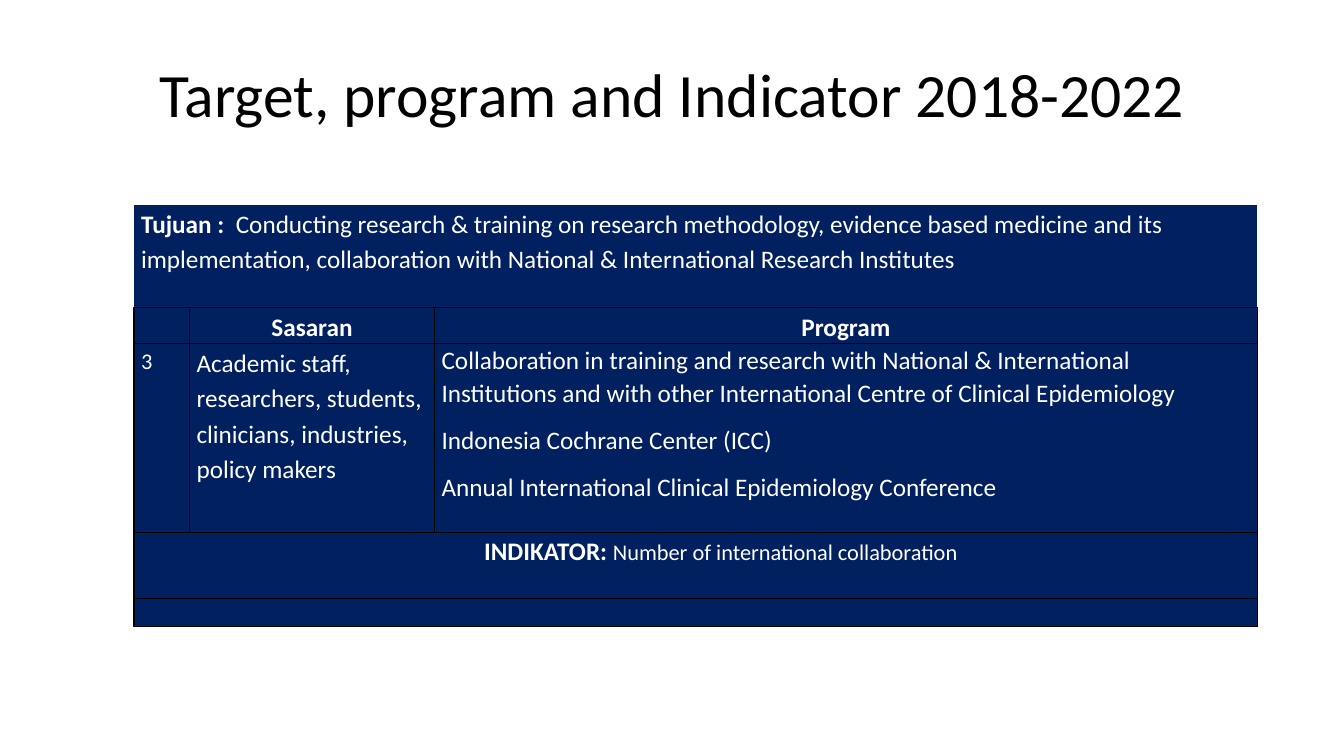
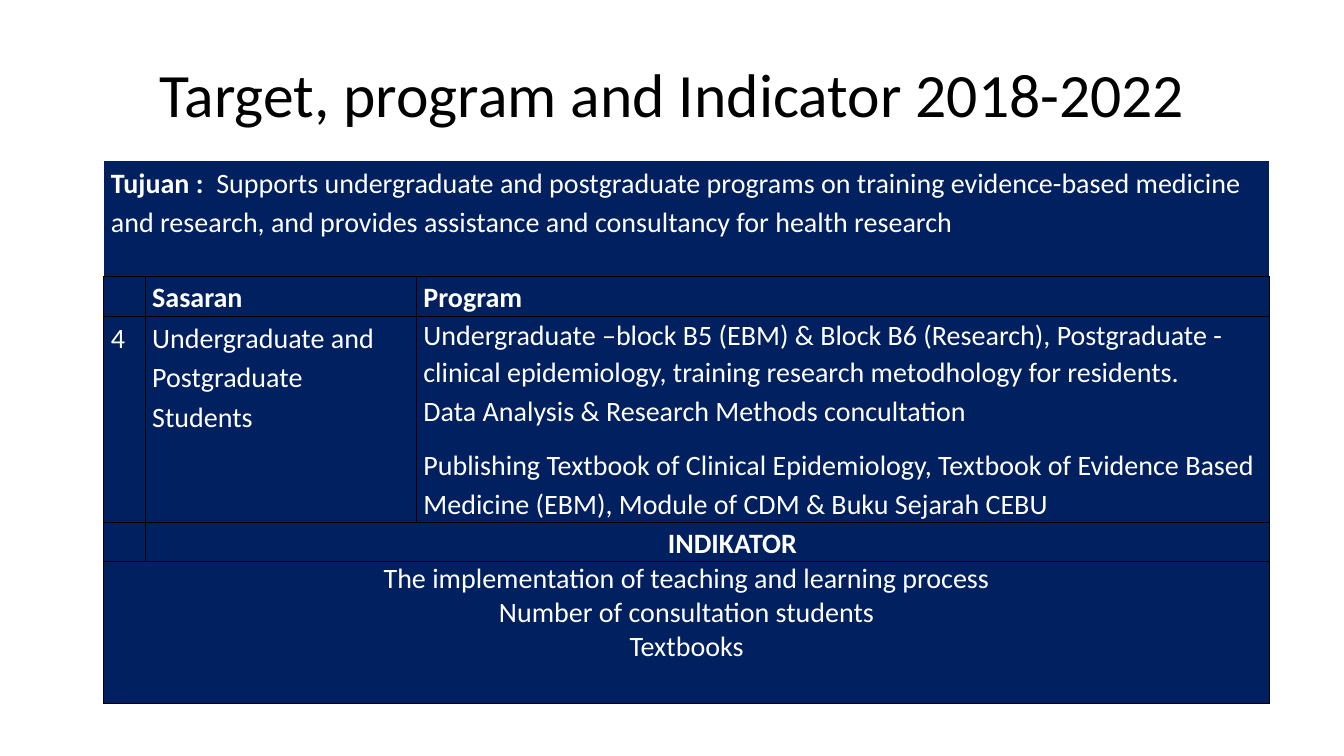
"""Build two slides of targets, programs and indicators, each with one table."""
from dataclasses import dataclass

from lxml.etree import SubElement
from pptx import Presentation
from pptx.dml.color import RGBColor
from pptx.enum.text import MSO_ANCHOR, PP_ALIGN
from pptx.oxml.ns import qn
from pptx.presentation import Presentation as Deck
from pptx.slide import Slide
from pptx.table import _Cell
from pptx.text.text import _Paragraph
from pptx.util import Inches, Pt


@dataclass(frozen=True)
class Theme:
    font: str = "Calibri"
    navy: RGBColor = RGBColor(0x00, 0x20, 0x60)
    white: RGBColor = RGBColor(0xFF, 0xFF, 0xFF)
    black: RGBColor = RGBColor(0x00, 0x00, 0x00)
    title_size: int = 44
    small_size: int = 16
    empty_size: int = 12
    border_width: int = 1


@dataclass(frozen=True)
class Line:
    text: str
    label: str = ""
    bold: bool = False
    centered: bool = False
    size: int = 0
    spacing: float = 1.15
    before: int = 0
    indent: float = 0


@dataclass(frozen=True)
class Entry:
    row: int
    column: int
    lines: tuple[Line, ...] = ()
    span: int = 1


@dataclass(frozen=True)
class Plan:
    left: float
    top: float
    columns: tuple[float, ...]
    rows: tuple[float, ...]
    size: int
    entries: tuple[Entry, ...]


THEME = Theme()
TITLE = "Target, program and Indicator 2018-2022"
GOAL = "Tujuan :  "

PLANS = (
    Plan(1.33, 2.03, (0.55, 2.43, 8.16), (1.02, 0.36, 1.87, 0.66, 0.28), 18, (
        Entry(0, 0, (Line(
            "Conducting research & training on research methodology, evidence based medicine and its "
            "implementation, collaboration with National & International Research Institutes", GOAL),), 3),
        Entry(1, 0),
        Entry(1, 1, (Line("Sasaran", bold=True, centered=True),)),
        Entry(1, 2, (Line("Program", bold=True, centered=True),)),
        Entry(2, 0, (Line("3", size=THEME.small_size),)),
        Entry(2, 1, (Line("Academic staff, researchers, students, clinicians, industries, policy makers"),)),
        Entry(2, 2, (
            Line("Collaboration in training and research with National & International Institutions "
                 "and with other International Centre of Clinical Epidemiology", spacing=1.07),
            Line("Indonesia Cochrane Center (ICC)", spacing=1.07, before=10),
            Line("Annual International Clinical Epidemiology Conference", spacing=1.07, before=10))),
        Entry(3, 0, (Line("Number of international collaboration", "INDIKATOR: ", centered=True,
                          size=THEME.small_size, indent=0.5),), 3),
        Entry(4, 0, span=3),
    )),
    Plan(1.03, 1.6, (0.41, 2.69, 8.46), (1.14, 0.4, 2.03, 0.39, 1.41), 20, (
        Entry(0, 0, (Line(
            "Supports undergraduate and postgraduate programs on training evidence-based medicine "
            "and research, and provides assistance and consultancy for health research", GOAL),), 3),
        Entry(1, 0),
        Entry(1, 1, (Line("Sasaran", bold=True),)),
        Entry(1, 2, (Line("Program", bold=True),)),
        Entry(2, 0, (Line("4"),)),
        Entry(2, 1, (Line("Undergraduate and Postgraduate Students"),)),
        Entry(2, 2, (
            Line("Undergraduate –block B5 (EBM) & Block B6 (Research), Postgraduate - clinical "
                 "epidemiology, training research metodhology for residents.", spacing=1.07),
            Line("Data Analysis & Research Methods concultation"),
            Line("Publishing Textbook of Clinical Epidemiology, Textbook of Evidence Based Medicine "
                 "(EBM), Module of CDM & Buku Sejarah CEBU", before=10))),
        Entry(3, 0),
        Entry(3, 1, (Line("INDIKATOR", bold=True, centered=True, indent=0.5),), 2),
        Entry(4, 0, (
            Line("The implementation of teaching and learning process", centered=True, spacing=1),
            Line("Number of consultation students", centered=True, spacing=1),
            Line("Textbooks", centered=True, spacing=1)), 3),
    )),
)


def set_borders(cell: _Cell, sides: str) -> None:
    properties = cell._tc.get_or_add_tcPr()
    for side in "LRTB":
        border = SubElement(properties, qn(f"a:ln{side}"), w=str(Pt(THEME.border_width)))
        if side in sides:
            fill = SubElement(border, qn("a:solidFill"))
            SubElement(fill, qn("a:srgbClr"), val=str(THEME.black))
        else:
            SubElement(border, qn("a:noFill"))


def write_line(para: _Paragraph, line: Line, size: int) -> None:
    if line.indent:
        para._p.get_or_add_pPr().set("marL", str(Inches(line.indent)))
    para.alignment = PP_ALIGN.CENTER if line.centered else PP_ALIGN.LEFT
    para.line_spacing = line.spacing
    para.space_before = Pt(line.before)
    para.font.name = THEME.font
    para.font.color.rgb = THEME.white
    para.font.size = Pt(size if line.label else line.size or size)
    para.font.bold = line.bold
    if line.label:
        label = para.add_run()
        label.text = line.label
        label.font.bold = True
    span = para.add_run()
    span.text = line.text
    if line.label and line.size:
        span.font.size = Pt(line.size)


def fill_cell(cell: _Cell, lines: tuple[Line, ...], size: int) -> None:
    cell.margin_left = cell.margin_right = Inches(0.07)
    cell.margin_top = cell.margin_bottom = 0
    frame = cell.text_frame
    frame.paragraphs[0].font.size = Pt(THEME.empty_size)
    for index, line in enumerate(lines):
        write_line(frame.add_paragraph() if index else frame.paragraphs[0], line, size)


def add_plan_table(page: Slide, plan: Plan) -> None:
    table = page.shapes.add_table(
        len(plan.rows), len(plan.columns), Inches(plan.left), Inches(plan.top),
        Inches(sum(plan.columns)), Inches(sum(plan.rows))).table
    table.first_row = table.horz_banding = False
    for column, width in zip(table.columns, plan.columns):
        column.width = Inches(width)
    for index, (row, height) in enumerate(zip(table.rows, plan.rows)):
        row.height = Inches(height)
        for cell in row.cells:
            set_borders(cell, "LRTB" if index else "B")
            cell.fill.solid()
            cell.fill.fore_color.rgb = THEME.navy
            fill_cell(cell, (), plan.size)
    for entry in plan.entries:
        cell = table.cell(entry.row, entry.column)
        if entry.span > 1:
            cell.merge(table.cell(entry.row, entry.column + entry.span - 1))
        fill_cell(cell, entry.lines, plan.size)


def add_page(deck: Deck, plan: Plan) -> None:
    page = deck.slides.add_slide(deck.slide_layouts[5])
    title = page.shapes.title
    title.left, title.top = Inches(0.67), Inches(0.3)
    title.width, title.height = Inches(12), Inches(1.25)
    title.text_frame.text = TITLE
    title.text_frame.vertical_anchor = MSO_ANCHOR.MIDDLE
    para = title.text_frame.paragraphs[0]
    para.alignment = PP_ALIGN.CENTER
    para.font.name = THEME.font
    para.font.size = Pt(THEME.title_size)
    para.font.color.rgb = THEME.black
    add_plan_table(page, plan)


def main() -> None:
    deck = Presentation()
    deck.slide_width, deck.slide_height = Inches(13.33), Inches(7.5)
    for plan in PLANS:
        add_page(deck, plan)
    deck.save("out.pptx")


if __name__ == "__main__":
    main()
